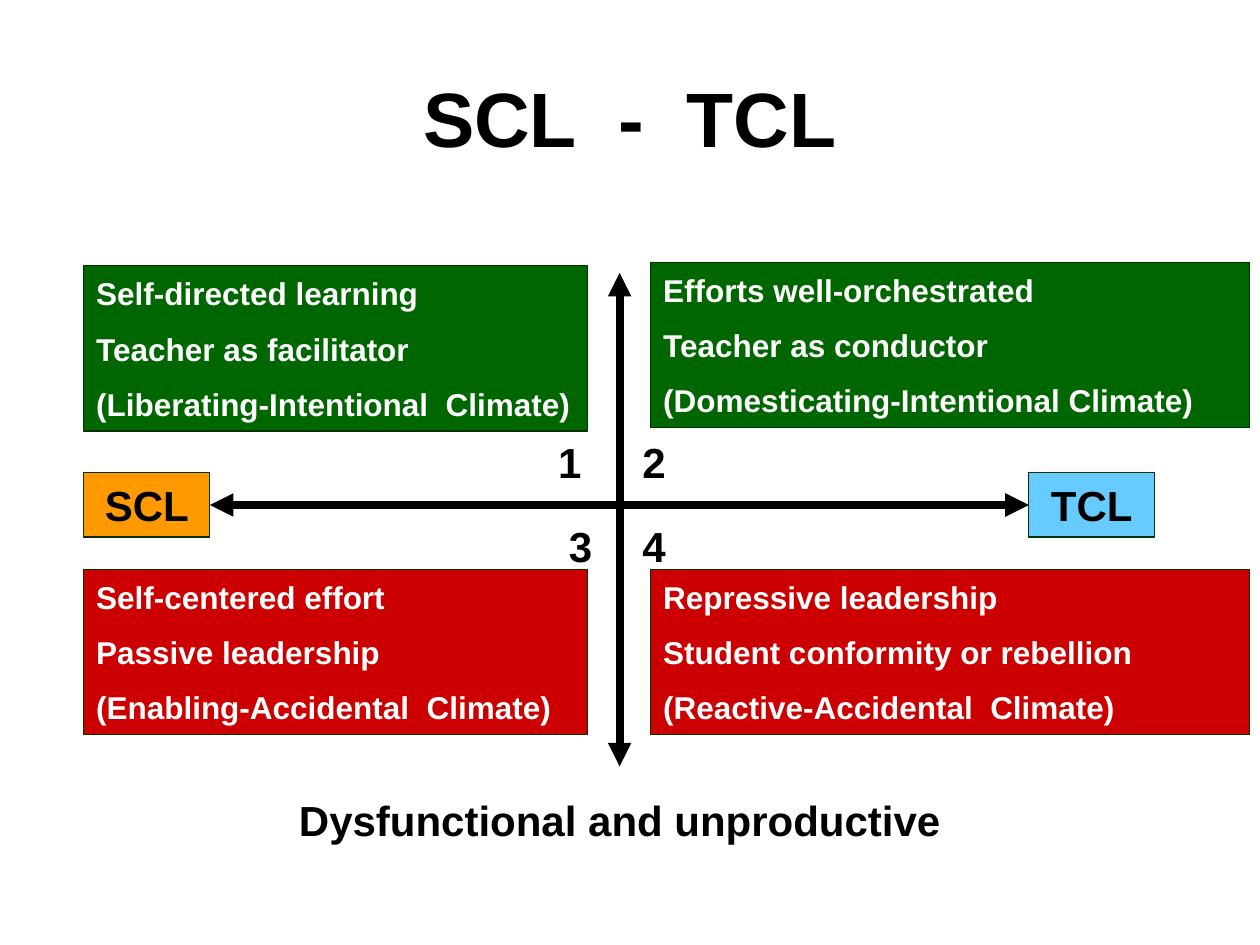
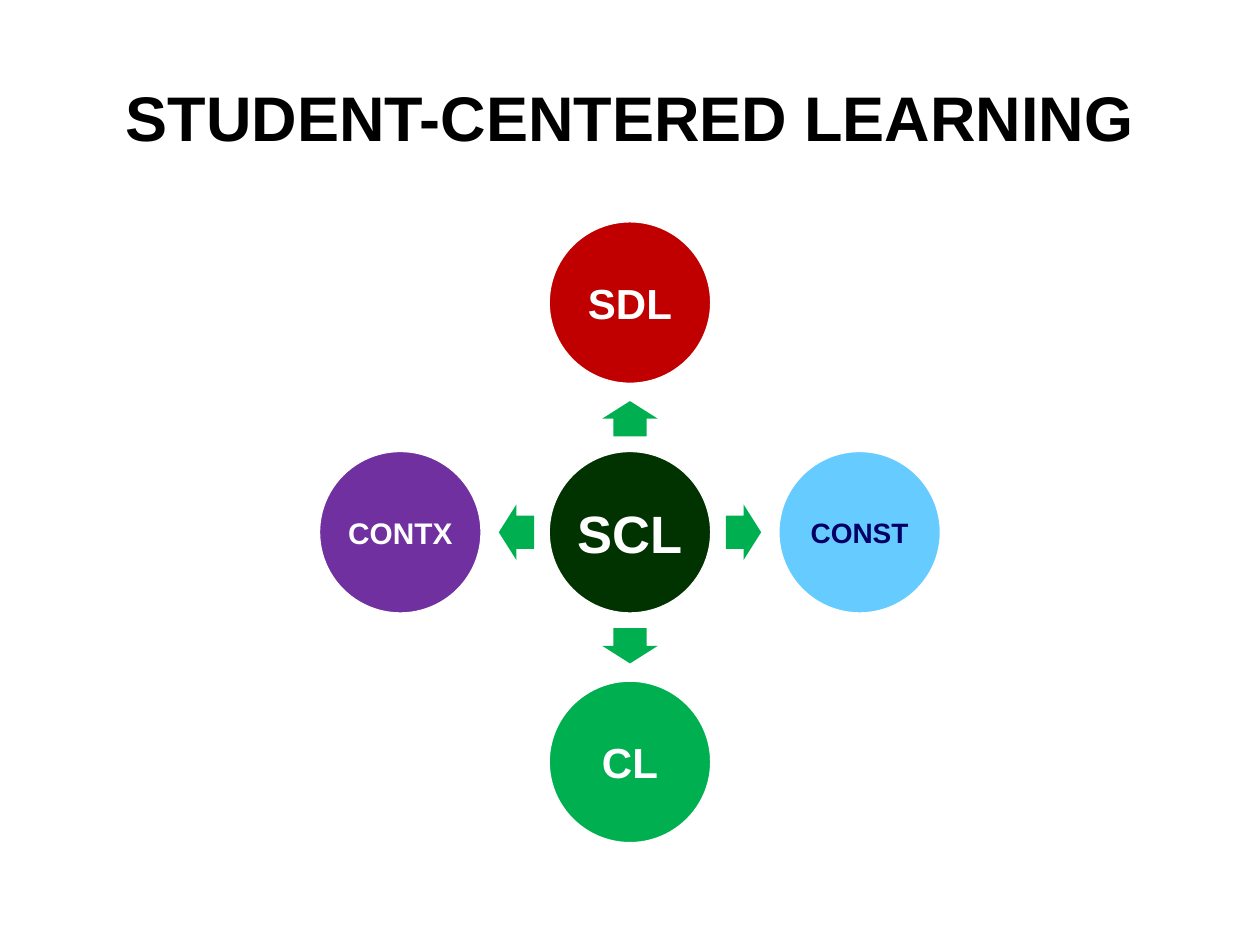
from dataclasses import dataclass
from math import cos, radians, sin

from lxml.etree import SubElement
from pptx import Presentation
from pptx.dml.color import RGBColor
from pptx.enum.shapes import MSO_CONNECTOR, MSO_SHAPE
from pptx.enum.text import MSO_ANCHOR, PP_ALIGN
from pptx.oxml.ns import qn
from pptx.util import Cm, Pt


@dataclass(frozen=True)
class Theme:
    font: str = "Arial"
    black: str = "000000"
    white: str = "FFFFFF"
    navy: str = "000066"
    forest: str = "003300"
    green: str = "006600"
    leaf: str = "00B050"
    red: str = "CC0000"
    crimson: str = "C00000"
    orange: str = "FF9900"
    sky: str = "66CCFF"
    purple: str = "7030A0"
    label_size: int = 24
    body_size: int = 18
    hub_size: int = 30


T = Theme()


def rgb(value):
    return RGBColor.from_string(value)


def write(s, lines, size, color, align=PP_ALIGN.CENTER, gap=0):
    """Fill a shape with bold paragraphs, centred vertically."""
    tf = s.text_frame
    tf.word_wrap = True
    tf.vertical_anchor = MSO_ANCHOR.MIDDLE
    for i, line in enumerate(lines):
        p = tf.paragraphs[0] if i == 0 else tf.add_paragraph()
        p.text = line
        p.alignment = align
        p.space_before = Pt(gap if i else 0)
        p.font.name = T.font
        p.font.size = Pt(size)
        p.font.bold = True
        p.font.color.rgb = rgb(color)
    return tf


def add_text(slide, text, x, y, w, h, size=T.label_size, align=PP_ALIGN.CENTER):
    s = slide.shapes.add_textbox(Cm(x), Cm(y), Cm(w), Cm(h))
    write(s, [text], size, T.black, align)


def add_title(slide, text, size):
    add_text(slide, text, 1.27, 0.76, 22.86, 3.18, size)


def add_filled(slide, kind, x, y, w, h, fill, line=None, width=0.75):
    s = slide.shapes.add_shape(kind, Cm(x), Cm(y), Cm(w), Cm(h))
    s.shadow.inherit = False
    s.fill.solid()
    s.fill.fore_color.rgb = rgb(fill)
    if line:
        s.line.color.rgb = rgb(line)
        s.line.width = Pt(width)
    else:
        s.line.fill.background()
    return s


def add_axis(slide, x1, y1, x2, y2):
    """Thick line with an arrowhead at both ends."""
    c = slide.shapes.add_connector(
        MSO_CONNECTOR.STRAIGHT, Cm(x1), Cm(y1), Cm(x2), Cm(y2))
    c.line.color.rgb = rgb(T.black)
    c.line.width = Pt(4.5)
    ln = c.line._get_or_add_ln()
    for end in ("a:headEnd", "a:tailEnd"):
        SubElement(ln, qn(end), type="triangle")
    SubElement(c._element.spPr, qn("a:effectLst"))
    return c


def add_pole(slide, text, x, fill):
    s = add_filled(slide, MSO_SHAPE.RECTANGLE, x, 9.53, 2.54, 1.3, fill, T.forest)
    write(s, [text], T.label_size, T.black)
    return s


def add_quadrant(slide, x, y, w, fill, lines):
    s = add_filled(slide, MSO_SHAPE.RECTANGLE, x, y, w, 3.33, fill, T.forest)
    write(s, lines, T.body_size, T.white, PP_ALIGN.LEFT, gap=10)


def add_circle(slide, text, cx, cy, fill, size, color=T.white):
    d = 3.3
    s = add_filled(slide, MSO_SHAPE.OVAL, cx - d / 2, cy - d / 2, d, d,
                   fill, T.white, 2)
    tf = write(s, [text], size, color)
    tf.margin_left = tf.margin_right = tf.margin_top = tf.margin_bottom = 0


def add_arrow(slide, cx, cy, angle):
    w, h = 0.71, 1.12
    s = add_filled(slide, MSO_SHAPE.RIGHT_ARROW, cx - w / 2, cy - h / 2, w, h, T.leaf)
    s.adjustments[0], s.adjustments[1] = 0.6, 0.5
    s.rotation = angle


def build_quadrants(slide):
    add_title(slide, "SCL  -  TCL", 44)

    # Axes and their poles
    scl = add_pole(slide, "SCL", 1.69, T.orange)
    tcl = add_pole(slide, "TCL", 20.74, T.sky)
    across = add_axis(slide, 4.23, 10.16, 20.74, 10.16)
    across.begin_connect(scl, 3)
    across.end_connect(tcl, 1)
    add_axis(slide, 12.49, 5.5, 12.49, 15.45)

    # Quadrant numbers
    for number, x, y in (("1", 11, 8.68), ("2", 12.7, 8.68),
                         ("3", 11.22, 10.37), ("4", 12.7, 10.37)):
        add_text(slide, number, x, y, 1.48, 1.27, align=PP_ALIGN.LEFT)

    # Quadrant descriptions
    left, right = (1.69, 10.16), (13.12, 12.07)
    quadrants = (
        (left, 5.36, T.green, ("Self-directed learning", "Teacher as facilitator",
                               "(Liberating-Intentional  Climate)")),
        (right, 5.29, T.green, ("Efforts well-orchestrated", "Teacher as conductor",
                                "(Domesticating-Intentional Climate)")),
        (left, 11.48, T.red, ("Self-centered effort", "Passive leadership",
                              "(Enabling-Accidental  Climate)")),
        (right, 11.48, T.red, ("Repressive leadership",
                               "Student conformity or rebellion",
                               "(Reactive-Accidental  Climate)")),
    )
    for (x, w), y, fill, lines in quadrants:
        add_quadrant(slide, x, y, w, fill, lines)

    add_text(slide, "Dysfunctional and unproductive", 5.72, 15.88, 13.55, 1.27)


def build_hub(slide):
    add_title(slide, "STUDENT-CENTERED LEARNING", 36)

    # Hub with four satellites, each reached by an arrow
    cx, cy = 12.7, 10.73
    circle_radius, arrow_radius = 4.63, 2.29
    add_circle(slide, "SCL", cx, cy, T.forest, T.hub_size)
    satellites = (
        ("SDL", 270, T.crimson, T.label_size, T.white),
        ("CONST", 0, T.sky, 16, T.navy),
        ("CL", 90, T.leaf, T.label_size, T.white),
        ("CONTX", 180, T.purple, 17, T.white),
    )
    for text, angle, fill, size, color in satellites:
        dx, dy = cos(radians(angle)), sin(radians(angle))
        add_arrow(slide, cx + arrow_radius * dx, cy + arrow_radius * dy, angle)
        add_circle(slide, text, cx + circle_radius * dx, cy + circle_radius * dy,
                   fill, size, color)


def main():
    prs = Presentation()
    prs.slide_width, prs.slide_height = Cm(25.4), Cm(19.05)
    blank = prs.slide_layouts[6]
    for build in (build_quadrants, build_hub):
        build(prs.slides.add_slide(blank))
    prs.save("out.pptx")


if __name__ == "__main__":
    main()
